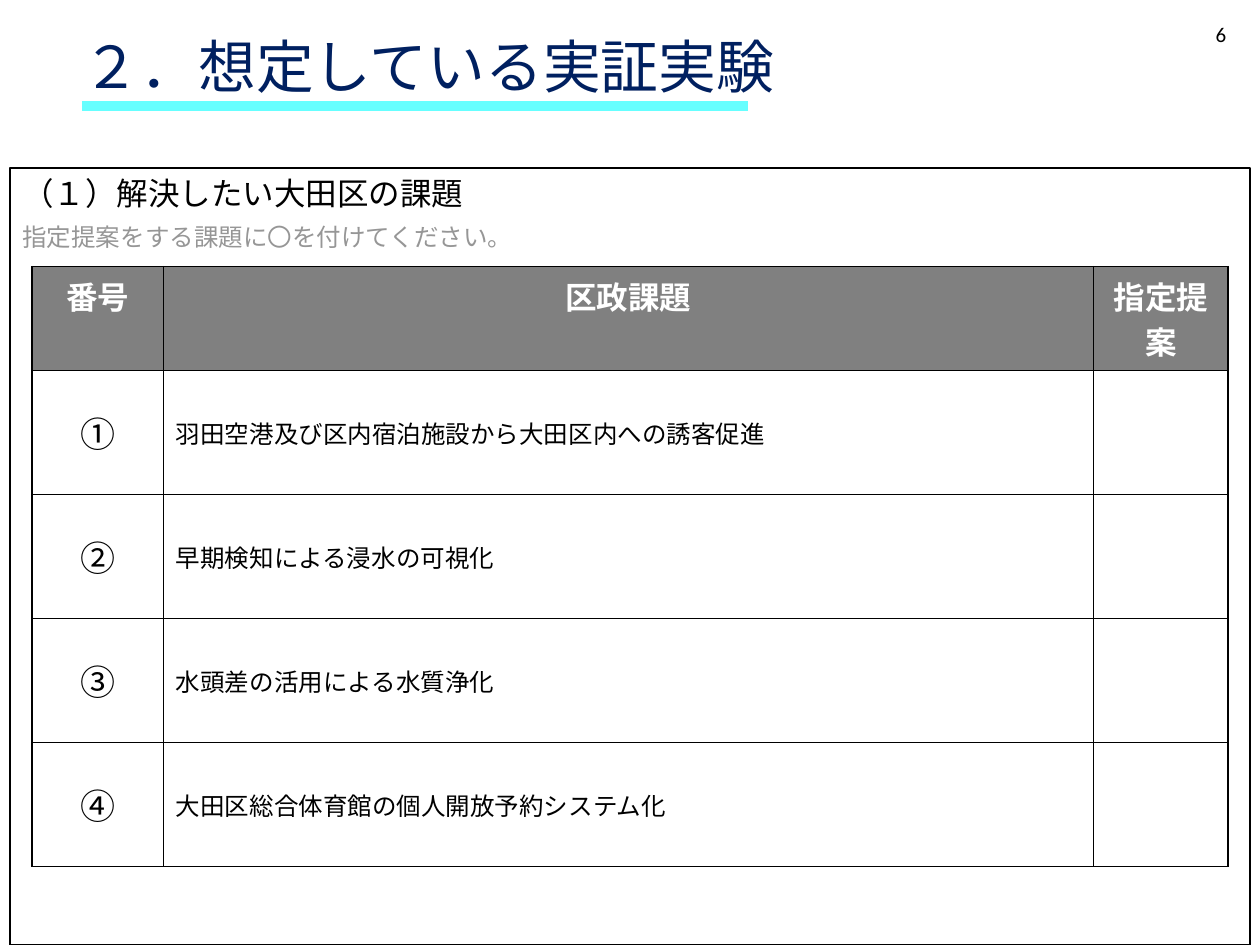
"""Build the slide listing the ward issues open to designated proposals."""
from lxml import etree
from pptx import Presentation
from pptx.dml import color
from pptx.enum import lang, shapes, text
from pptx.oxml import ns
from pptx.util import Pt

HUES = {"navy": "002060", "aqua": "66FFFF", "black": "000000",
        "hint": "969696", "head": "808080", "white": "FFFFFF"}
SANS, LATIN = "Noto Sans CJK JP", "Calibri"
MID, RIGHT = text.PP_ALIGN.CENTER, text.PP_ALIGN.RIGHT
HEADS = ["番号", "区政課題", "指定提案"]
ISSUES = [
    ("①", "羽田空港及び区内宿泊施設から大田区内への誘客促進"),
    ("②", "早期検知による浸水の可視化"),
    ("③", "水頭差の活用による水質浄化"),
    ("④", "大田区総合体育館の個人開放予約システム化"),
]


def hue(name):
    """Return the named colour."""
    return color.RGBColor.from_string(HUES[name])


def style(para, size, face, tint, align=None, bold=False):
    """Format a paragraph and its runs."""
    para.alignment = align
    for run in para.runs:
        font = run.font
        font.size, font.name, font.bold = Pt(size), face, bold
        font.color.rgb = hue(tint)
        font.language_id = lang.MSO_LANGUAGE_ID.JAPANESE


def label(slide, box, words, size, tint, align=None):
    """Add a one-line text box and return its paragraph."""
    frame = slide.shapes.add_textbox(*map(Pt, box)).text_frame
    frame.word_wrap = True
    frame.text = words
    para = frame.paragraphs[0]
    style(para, size, LATIN, tint, align)
    return para


def title(slide, x, y, w, h):
    """Add the heading and its underline."""
    para = label(slide, (x, y, w, h), "２．想定している実証実験", 33, "navy")
    para.line_spacing = 0.9
    rule = slide.shapes.add_connector(
        shapes.MSO_CONNECTOR.STRAIGHT,
        Pt(x + 6.5), Pt(y + 42), Pt(x + 387), Pt(y + 42))
    rule.line.color.rgb = hue("aqua")
    rule.line.width = Pt(6)
    etree.SubElement(rule._element.spPr, ns.qn("a:effectLst"))


def panel(slide, x, y, w, h):
    """Add the outlined panel with its heading, hint and table."""
    rect = slide.shapes.add_shape(
        shapes.MSO_SHAPE.RECTANGLE, Pt(x), Pt(y), Pt(w), Pt(h))
    rect.shadow.inherit = False
    rect.fill.background()
    rect.line.color.rgb = hue("black")
    rect.line.width = Pt(0.75)
    frame = rect.text_frame
    frame.word_wrap = True
    frame.vertical_anchor = text.MSO_ANCHOR.TOP
    frame.text = "（１）解決したい大田区の課題\n指定提案をする課題に〇を付けてください。"
    head, hint = frame.paragraphs
    style(head, 18, SANS, "black", text.PP_ALIGN.LEFT)
    style(hint, 14, SANS, "hint", text.PP_ALIGN.LEFT)
    hint.space_before = Pt(5.5)
    grid(slide, x + 12.6, y + 56.3, [75, 531.5, 77],
         [59.3] + [70.9] * len(ISSUES))


def border(cell):
    """Draw a thin black line on every side of a cell."""
    props = cell._tc.get_or_add_tcPr()
    for side in ("lnL", "lnR", "lnT", "lnB"):
        line = etree.SubElement(props, ns.qn(f"a:{side}"), w=str(Pt(1)))
        fill = etree.SubElement(line, ns.qn("a:solidFill"))
        etree.SubElement(fill, ns.qn("a:srgbClr"), val=HUES["black"])


def grid(slide, x, y, wides, highs):
    """Add the table of issues."""
    table = slide.shapes.add_table(
        len(highs), len(wides), Pt(x), Pt(y),
        Pt(sum(wides)), Pt(sum(highs))).table
    table.first_row = table.horz_banding = False
    for col, wide in zip(table.columns, wides):
        col.width = Pt(wide)
    for row, high in zip(table.rows, highs):
        row.height = Pt(high)
    for cell in table.iter_cells():
        border(cell)
        cell.fill.background()
    for c, words in enumerate(HEADS):
        cell = table.cell(0, c)
        cell.fill.solid()
        cell.fill.fore_color.rgb = hue("head")
        cell.text_frame.text = words
        style(cell.text_frame.paragraphs[0], 18, SANS, "white", MID, True)
    looks = [(20, SANS, "black", MID), (14, LATIN, "black")]
    for r, issue in enumerate(ISSUES, 1):
        for c, (words, look) in enumerate(zip(issue, looks)):
            cell = table.cell(r, c)
            cell.vertical_anchor = text.MSO_ANCHOR.MIDDLE
            cell.text_frame.text = words
            style(cell.text_frame.paragraphs[0], *look)


def main():
    """Build and save the slide."""
    deck = Presentation()
    deck.slide_width, deck.slide_height = Pt(720), Pt(540)
    slide = deck.slides.add_slide(deck.slide_layouts[6])
    title(slide, 40.3, 18.5, 620, 60.5)
    label(slide, (545.8, 8.6, 162, 28.8), "6", 12, "black", RIGHT)
    panel(slide, 5.7, 96, 708.6, 444)
    deck.save("out.pptx")


if __name__ == "__main__":
    main()
